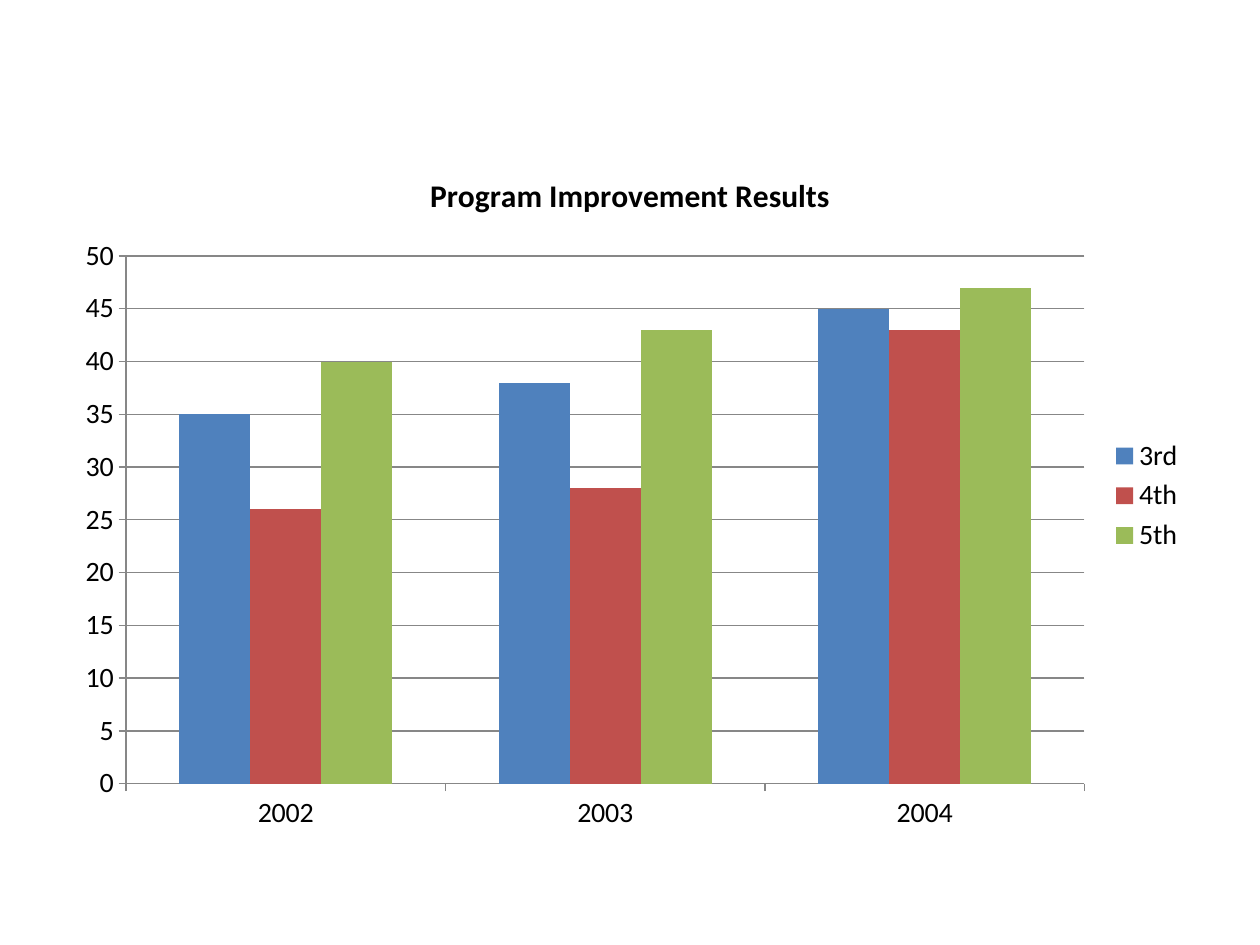
from dataclasses import dataclass

from pptx import Presentation
from pptx.chart.data import CategoryChartData
from pptx.dml.color import RGBColor
from pptx.enum.chart import XL_CHART_TYPE, XL_LEGEND_POSITION, XL_TICK_MARK
from pptx.util import Inches, Pt

COLUMNS = XL_CHART_TYPE.COLUMN_CLUSTERED
LEGEND_RIGHT = XL_LEGEND_POSITION.RIGHT
TICK_OUTSIDE = XL_TICK_MARK.OUTSIDE
BLANK_LAYOUT = 6


@dataclass(frozen=True)
class Theme:
    font: str = "Calibri"
    text: str = "000000"
    line: str = "878787"
    title_size: int = 18
    label_size: int = 16
    line_width: float = 0.75


THEME = Theme()
YEARS = ("2002", "2003", "2004")
# Grade, results by year, column colour
GRADES = (
    ("3rd", (35, 38, 45), "4F81BD"),
    ("4th", (26, 28, 43), "C0504D"),
    ("5th", (40, 43, 47), "9BBB59"),
)


def format_font(font, size=THEME.label_size, bold=False, color=THEME.text):
    font.name = THEME.font
    font.size = Pt(size)
    font.bold = bold
    font.color.rgb = RGBColor.from_string(color)


def write_text(text_frame, text, **font_format):
    run = text_frame.paragraphs[0].add_run()
    run.text = text
    format_font(run.font, **font_format)


def format_line(line):
    line.color.rgb = RGBColor.from_string(THEME.line)
    line.width = Pt(THEME.line_width)


def add_results_chart(slide, left, top, width, height):
    data = CategoryChartData()
    data.categories = YEARS
    for grade, results, _ in GRADES:
        data.add_series(grade, results)
    chart = slide.shapes.add_chart(COLUMNS, left, top, width, height, data).chart
    format_font(chart.font)

    # Title
    chart.has_title = True
    chart.chart_title.include_in_layout = False
    write_text(chart.chart_title.text_frame, "Program Improvement Results",
               size=THEME.title_size, bold=True)

    # Axes and gridlines
    for axis in (chart.category_axis, chart.value_axis):
        axis.major_tick_mark = TICK_OUTSIDE
        format_font(axis.tick_labels.font)
        format_line(axis.format.line)
    value_axis = chart.value_axis
    value_axis.minimum_scale = 0
    value_axis.maximum_scale = 50
    value_axis.major_unit = 5
    value_axis.has_major_gridlines = True
    format_line(value_axis.major_gridlines.format.line)

    # Columns
    plot = chart.plots[0]
    plot.gap_width = 150
    plot.overlap = 0
    plot.vary_by_categories = False
    for series, (_, _, color) in zip(plot.series, GRADES):
        series.format.fill.solid()
        series.format.fill.fore_color.rgb = RGBColor.from_string(color)

    # Legend
    chart.has_legend = True
    chart.legend.position = LEGEND_RIGHT
    chart.legend.include_in_layout = False
    format_font(chart.legend.font)


def main():
    presentation = Presentation()
    presentation.slide_width = Inches(10)
    presentation.slide_height = Inches(7.5)
    slide = presentation.slides.add_slide(presentation.slide_layouts[BLANK_LAYOUT])
    add_results_chart(slide, Inches(0.5), Inches(1.17), Inches(9), Inches(5.53))
    presentation.save("out.pptx")


if __name__ == "__main__":
    main()
